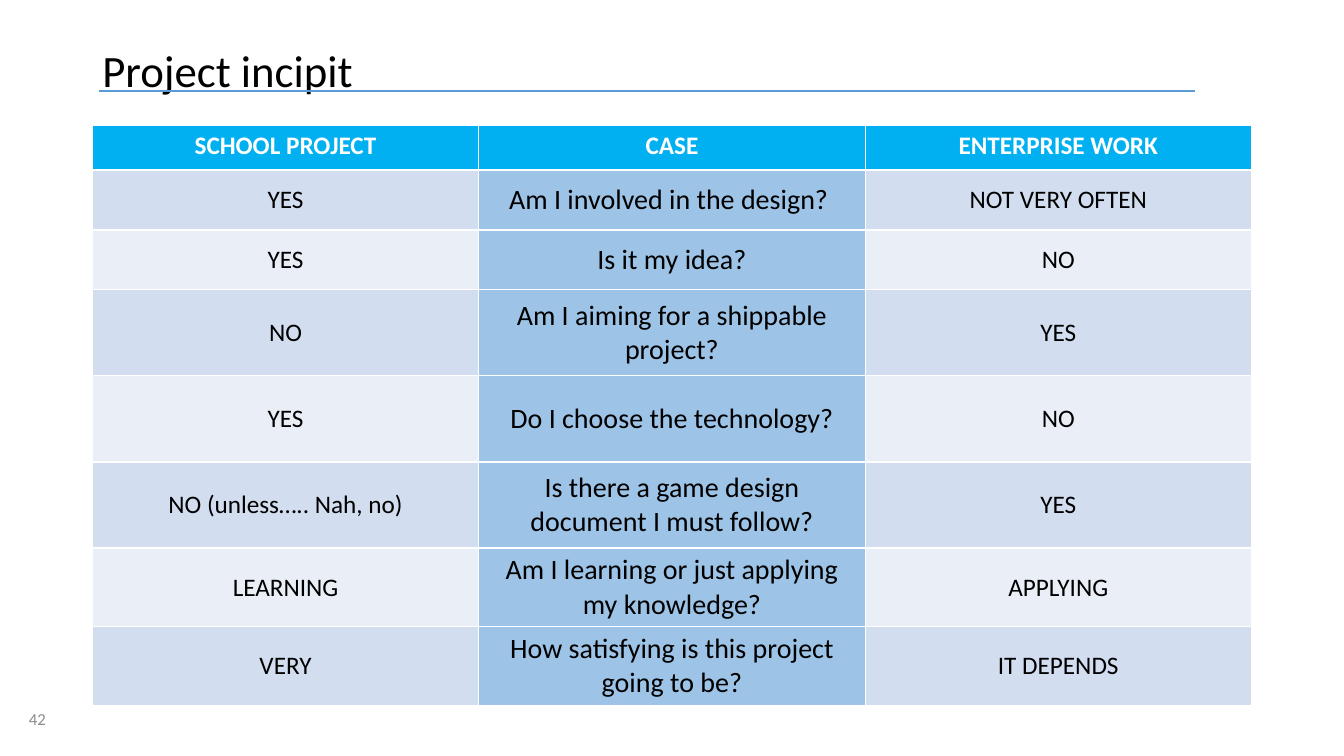
from lxml import etree
from pptx import Presentation, util as u
from pptx.dml import color
from pptx.enum import shapes, text
from pptx.oxml import ns

PX = 9525
HEADINGS = ("SCHOOL PROJECT", "CASE", "ENTERPRISE WORK")
ANSWERS = [
    ("YES", "Am I involved in the design? ", "NOT VERY OFTEN"),
    ("YES", "Is it my idea?", "NO"),
    ("NO", "Am I aiming for a shippable project?", "YES"),
    ("YES", "Do I choose the technology?", "NO"),
    ("NO (unless….. Nah, no)", "Is there a game design document I must follow?", "YES"),
    ("LEARNING", "Am I learning or just applying my knowledge?", "APPLYING"),
    ("VERY", "How satisfying is this project going to be?", "IT DEPENDS"),
]
ROW_HEIGHTS = (43, 57, 57, 82, 82, 82, 75, 75)


def rgb(value):
    return color.RGBColor.from_string(value)


def px(*lengths):
    return [u.Emu(length * PX) for length in lengths]


class ComparisonSlide:
    """Builds the elements of one slide in a shared style."""

    font = "Calibri"
    ink = "000000"
    white = "FFFFFF"
    header = "00B0F0"
    question = "9DC3E6"
    bands = ("D2DEEF", "EAEFF7")

    def __init__(self, deck):
        self.slide = deck.slides.add_slide(deck.slide_layouts[6])

    def style(self, paragraph, size, ink, bold=False):
        for run in paragraph.runs:
            run.font.name = self.font
            run.font.size = u.Pt(size)
            run.font.bold = bold
            run.font.color.rgb = rgb(ink)

    def label(self, words, box, size, ink, spacing=1.0):
        frame = self.slide.shapes.add_textbox(*px(*box)).text_frame
        frame.word_wrap = True
        frame.vertical_anchor = text.MSO_ANCHOR.MIDDLE
        frame.text = words
        frame.paragraphs[0].line_spacing = spacing
        self.style(frame.paragraphs[0], size, ink)

    def rule(self, start, end, ink, width):
        underline = self.slide.shapes.add_connector(
            shapes.MSO_CONNECTOR.STRAIGHT, *px(*start, *end))
        underline.line.color.rgb = rgb(ink)
        underline.line.width = u.Pt(width)
        etree.SubElement(underline._element.spPr, ns.qn("a:effectLst"))

    def cell(self, cell, words, fill, size, ink, bold, anchor):
        cell.fill.solid()
        cell.fill.fore_color.rgb = rgb(fill)
        cell.vertical_anchor = anchor
        cell.text = words
        paragraph = cell.text_frame.paragraphs[0]
        paragraph.alignment = text.PP_ALIGN.CENTER
        self.style(paragraph, size, ink, bold)

    def table(self, headings, answers, left, top, column_width, heights):
        grid = self.slide.shapes.add_table(
            len(heights), len(headings),
            *px(left, top, column_width * len(headings), sum(heights))).table
        for row, height in zip(grid.rows, heights):
            row.height = u.Emu(height * PX)
        for c, heading in enumerate(headings):
            self.cell(grid.cell(0, c), heading, self.header, 18, self.white,
                      True, text.MSO_ANCHOR.TOP)
        for r, answer in enumerate(answers):
            for c, words in enumerate(answer):
                asks = c == 1
                self.cell(grid.cell(r + 1, c), words,
                          self.question if asks else self.bands[r % 2],
                          20 if asks else 18, self.ink, False,
                          text.MSO_ANCHOR.MIDDLE)


def main():
    deck = Presentation()
    deck.slide_width, deck.slide_height = px(1280, 720)
    page = ComparisonSlide(deck)
    page.label("Project incipit", (88, 38, 1104, 63), 32, page.ink, 0.9)
    page.rule((94, 87), (1138, 87), "5B9BD5", 1.5)
    page.table(HEADINGS, ANSWERS, 88, 119, 368, ROW_HEIGHTS)
    page.label("42", (18, 666, 288, 38), 12, "8C8C8C")
    deck.save("out.pptx")


if __name__ == "__main__":
    main()
